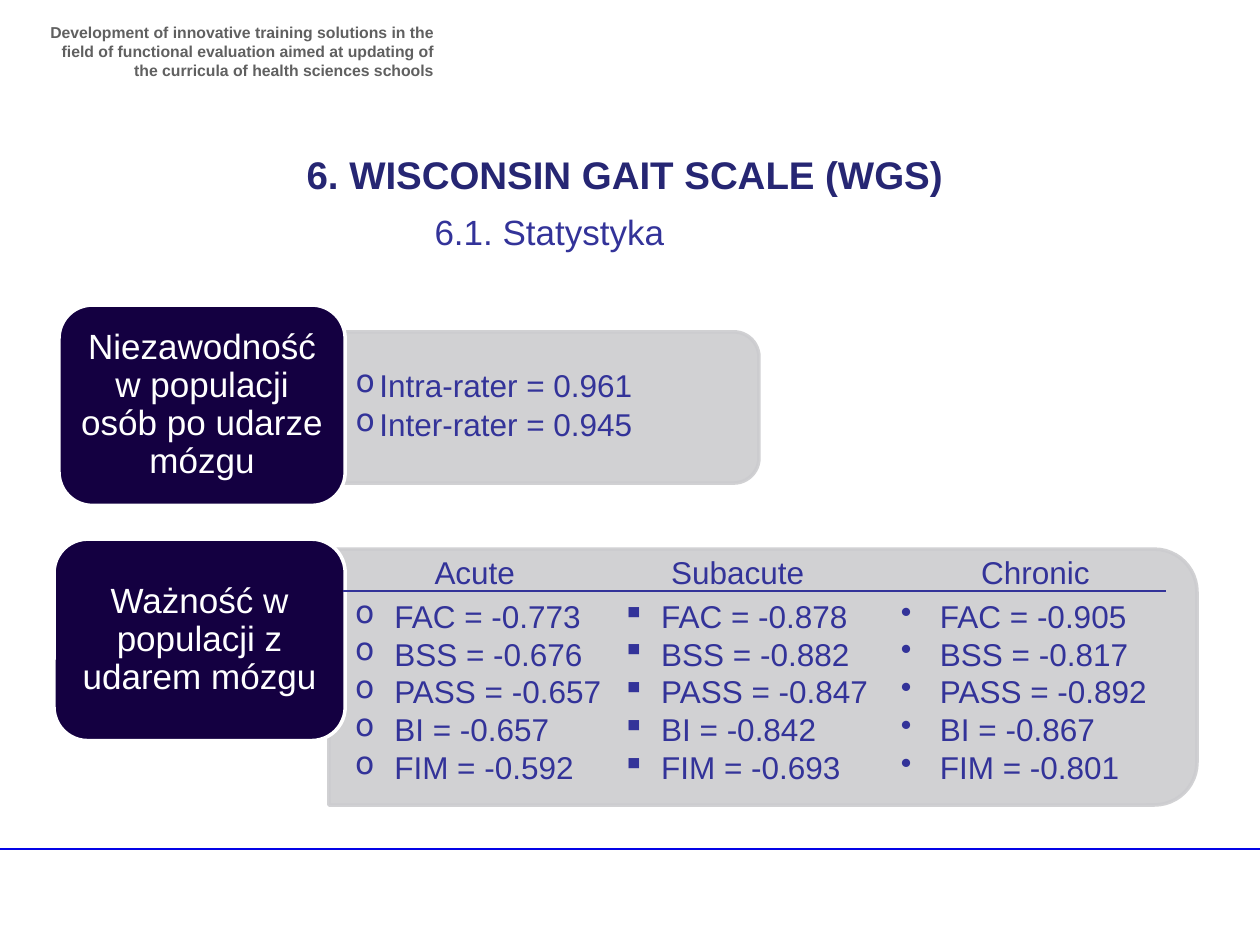
from dataclasses import dataclass

from lxml import etree
from pptx import Presentation
from pptx.dml.color import RGBColor
from pptx.enum.shapes import MSO_CONNECTOR, MSO_SHAPE
from pptx.enum.text import MSO_ANCHOR, PP_ALIGN
from pptx.oxml.ns import qn
from pptx.util import Cm, Pt

LEFT, CENTER, RIGHT = PP_ALIGN.LEFT, PP_ALIGN.CENTER, PP_ALIGN.RIGHT
TOP, MIDDLE = MSO_ANCHOR.TOP, MSO_ANCHOR.MIDDLE
ROUNDED, ROUNDED_TOP = MSO_SHAPE.ROUNDED_RECTANGLE, MSO_SHAPE.ROUND_2_SAME_RECTANGLE
STRAIGHT = MSO_CONNECTOR.STRAIGHT

FONT = "Arial"
INDIGO, NAVY, DARK = "333399", "262673", "140041"
PANEL, WHITE, GREY, BLUE = "CCCCCF", "FFFFFF", "606060", "0404E6"


@dataclass
class Box:
    x: float
    y: float
    w: float
    h: float

    def lengths(self) -> list:
        return [Cm(v) for v in (self.x, self.y, self.w, self.h)]


@dataclass
class Style:
    size: float
    color: str = INDIGO
    bold: bool = False
    align: PP_ALIGN = LEFT
    anchor: MSO_ANCHOR = TOP
    inset: tuple = (0.25, 0.13)
    bullet: str = ""
    indent: float = 0
    spacing: float = 1
    after: float = 0


@dataclass
class Card:
    box: Box
    panel: Box
    label: str


@dataclass
class Column:
    title: str
    title_x: float
    title_w: float
    x: float
    bullet: str
    values: tuple


def rgb(color: str) -> RGBColor:
    return RGBColor.from_string(color)


def write(sp, lines, style: Style) -> None:
    tf = sp.text_frame
    tf.word_wrap = True
    tf.vertical_anchor = style.anchor
    tf.margin_left = tf.margin_right = Cm(style.inset[0])
    tf.margin_top = tf.margin_bottom = Cm(style.inset[1])
    for i, line in enumerate(lines):
        p = tf.add_paragraph() if i else tf.paragraphs[0]
        if style.bullet:
            pPr = p._p.get_or_add_pPr()
            pPr.set("marL", str(Cm(style.indent)))
            pPr.set("indent", str(-Cm(style.indent)))
            etree.SubElement(pPr, qn("a:buChar")).set("char", style.bullet)
        p.alignment = style.align
        p.line_spacing = style.spacing
        p.space_after = Pt(style.after)
        r = p.add_run()
        r.text = line
        r.font.name = FONT
        r.font.size = Pt(style.size)
        r.font.bold = style.bold
        r.font.color.rgb = rgb(style.color)


def add_text(s, box: Box, lines, style: Style) -> None:
    write(s.shapes.add_textbox(*box.lengths()), lines, style)


def add_shape(s, kind, box: Box, fill: str, line: str):
    sp = s.shapes.add_shape(kind, *box.lengths())
    sp.shadow.inherit = False
    sp.fill.solid()
    sp.fill.fore_color.rgb = rgb(fill)
    sp.line.color.rgb = rgb(line)
    sp.line.width = Pt(2)
    return sp


def add_panel(s, box: Box) -> None:
    shift = (box.w - box.h) / 2
    upright = Box(box.x + shift, box.y - shift, box.h, box.w)
    sp = add_shape(s, ROUNDED_TOP, upright, PANEL, PANEL)
    sp.rotation = 90
    for clr in sp.element.spPr.iter(qn("a:srgbClr")):
        etree.SubElement(clr, qn("a:alpha")).set("val", "90000")


def add_card(s, card: Card) -> None:
    add_panel(s, card.panel)
    sp = add_shape(s, ROUNDED, card.box, DARK, WHITE)
    write(sp, [card.label], CARD_STYLE)


def add_rule(s, x1: float, x2: float, y: float, color: str) -> None:
    cn = s.shapes.add_connector(STRAIGHT, Cm(x1), Cm(y), Cm(x2), Cm(y))
    cn.line.color.rgb = rgb(color)
    cn.line.width = Pt(1)
    etree.SubElement(cn.element.spPr, qn("a:effectLst"))


def add_column(s, col: Column) -> None:
    add_text(s, Box(col.title_x, 11.02, col.title_w, 1.02), [col.title], Style(18))
    lines = [f"{scale} = {value}" for scale, value in zip(SCALES, col.values)]
    add_text(s, Box(col.x, 11.9, 5.59, 4.11), lines,
             Style(18, bullet=col.bullet, indent=0.79))


CARD_STYLE = Style(20, WHITE, align=CENTER, anchor=MIDDLE, inset=(0.2, 0.1), spacing=0.9)
RATER_STYLE = Style(18, anchor=MIDDLE, inset=(0.69, 0.36), bullet="o",
                    indent=0.48, spacing=0.9, after=3)
SCALES = ("FAC", "BSS", "PASS", "BI", "FIM")
CARDS = (
    Card(Box(1.19, 6.15, 5.77, 4.04), Box(6.49, 6.69, 8.81, 3.05),
         "Niezawodność w populacji osób po udarze mózgu"),
    Card(Box(1.09, 10.87, 5.87, 4.06), Box(6.63, 11.07, 17.5, 5.16),
         "Ważność w populacji z udarem mózgu"),
)
COLUMNS = (
    Column("Acute", 8.51, 2.39, 6.91, "o",
           ("-0.773", "-0.676", "-0.657", "-0.657", "-0.592")),
    Column("Subacute", 13.28, 3.61, 12.29, "▪",
           ("-0.878", "-0.882", "-0.847", "-0.842", "-0.693")),
    Column("Chronic", 19.53, 2.74, 17.91, "•",
           ("-0.905", "-0.817", "-0.892", "-0.867", "-0.801")),
)


def main() -> None:
    prs = Presentation()
    prs.slide_width, prs.slide_height = Cm(25.4), Cm(19.05)
    s = prs.slides.add_slide(prs.slide_layouts[6])

    add_rule(s, -0.13, 25.4, 17.12, BLUE)
    add_text(s, Box(0.71, 0.33, 8.28, 1.19),
             ["Development of innovative training solutions in the ﬁeld of functional "
              "evaluation aimed at updating of the curricula of health sciences schools"],
             Style(9, GREY, bold=True, align=RIGHT))
    add_text(s, Box(1.7, 2.92, 21.79, 1.19), ["6. WISCONSIN GAIT SCALE (WGS)"],
             Style(22, NAVY, bold=True, align=CENTER))
    add_text(s, Box(8.51, 4.11, 8.1, 1.96), ["6.1. Statystyka"], Style(20))

    for card in CARDS:
        add_card(s, card)
    add_text(s, Box(6.48, 6.83, 8.66, 2.74),
             ["Intra-rater = 0.961", "Inter-rater = 0.945"], RATER_STYLE)
    add_rule(s, 6.91, 23.5, 11.91, INDIGO)
    for col in COLUMNS:
        add_column(s, col)

    prs.save("out.pptx")


if __name__ == "__main__":
    main()
